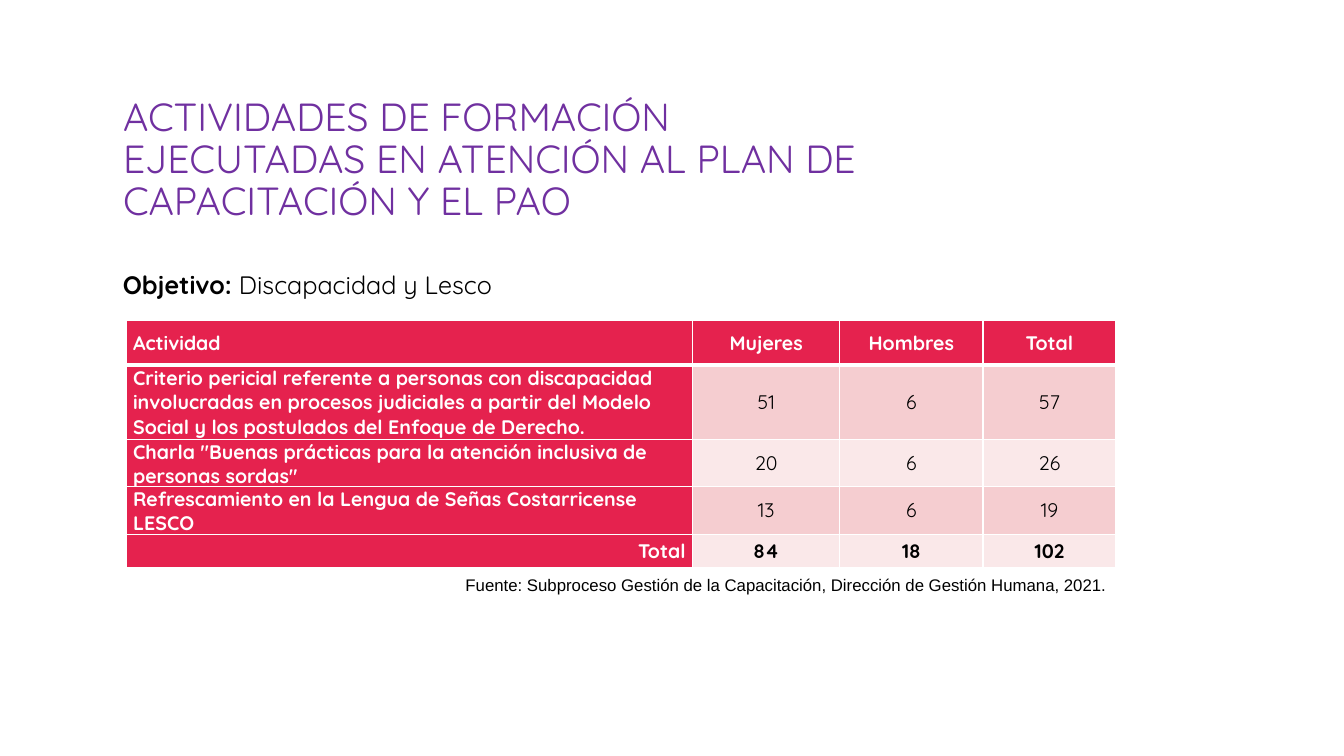
from dataclasses import dataclass

from lxml.etree import SubElement
from pptx import Presentation
from pptx.dml.color import RGBColor
from pptx.enum.text import MSO_ANCHOR, MSO_AUTO_SIZE, PP_ALIGN
from pptx.oxml.ns import qn
from pptx.util import Inches, Pt

TITLE = "ACTIVIDADES DE FORMACIÓN EJECUTADAS EN ATENCIÓN AL PLAN DE CAPACITACIÓN Y EL PAO"
OBJECTIVE = [("Objetivo: ", True), ("Discapacidad y Lesco", False)]
SOURCE = "Fuente: Subproceso Gestión de la Capacitación, Dirección de Gestión Humana, 2021."
ACTIVITIES = [
    ("Actividad", "Mujeres", "Hombres", "Total"),
    ("Criterio pericial referente a personas con discapacidad involucradas en procesos "
     "judiciales a partir del Modelo Social y los postulados del Enfoque de Derecho.",
     "51", "6", "57"),
    ('Charla "Buenas prácticas para la atención inclusiva de personas sordas"',
     "20", "6", "26"),
    ("Refrescamiento en la Lengua de Señas Costarricense LESCO", "13", "6", "19"),
    ("Total", "84", "18", "102"),
]
COLUMN_WIDTHS = [5.62, 1.46, 1.42, 1.32]
ROW_HEIGHTS = [0.44, 0.74, 0.47, 0.47, 0.33]


@dataclass(frozen=True)
class Theme:
    font: str = "Quicksand"
    source_font: str = "Arial"
    title: str = "7030A0"
    text: str = "000000"
    white: str = "FFFFFF"
    header: str = "E5224E"
    bands: tuple = ("FAE8E9", "F5CDD0")
    title_size: int = 28
    objective_size: int = 18
    table_size: int = 14
    source_size: int = 12


theme = Theme()


def add_span(para, text, size, color, bold=False, font=theme.font):
    span = para.add_run()
    span.text = text
    span.font.name = font
    span.font.size = Pt(size)
    span.font.bold = bold
    span.font.color.rgb = RGBColor.from_string(color)


def add_text_box(page, left, top, width, height):
    box = page.shapes.add_textbox(Inches(left), Inches(top), Inches(width), Inches(height))
    box.text_frame.word_wrap = True
    return box.text_frame.paragraphs[0]


def set_borders(cell, widths):
    properties = cell._tc.get_or_add_tcPr()
    for position, (side, width) in enumerate(widths.items()):
        line = SubElement(properties, qn(f"a:ln{side}"), w=str(Pt(width)))
        fill = SubElement(line, qn("a:solidFill"))
        SubElement(fill, qn("a:srgbClr"), val=theme.white)
        properties.insert(position, line)


def add_title(page):
    title = page.shapes.title
    title.left, title.top = Inches(1.12), Inches(0.89)
    title.width, title.height = Inches(7.48), Inches(1.41)
    frame = title.text_frame
    frame.word_wrap = True
    frame.auto_size = MSO_AUTO_SIZE.NONE
    frame.vertical_anchor = MSO_ANCHOR.MIDDLE
    para = frame.paragraphs[0]
    para.alignment = PP_ALIGN.LEFT
    para.line_spacing = 0.9
    add_span(para, TITLE, theme.title_size, theme.title)


def fill_cell(cell, text, row, column):
    last = len(ACTIVITIES) - 1
    is_label = row == 0 or column == 0
    cell.fill.solid()
    cell.fill.fore_color.rgb = RGBColor.from_string(
        theme.header if is_label else theme.bands[row % 2])
    cell.margin_left = cell.margin_right = Inches(0.07)
    cell.margin_top = cell.margin_bottom = 0
    cell.vertical_anchor = MSO_ANCHOR.MIDDLE
    para = cell.text_frame.paragraphs[0]
    if column:
        para.alignment = PP_ALIGN.CENTER
    else:
        para.alignment = PP_ALIGN.RIGHT if row == last else PP_ALIGN.LEFT
    add_span(para, text, theme.table_size, theme.white if is_label else theme.text,
             bold=is_label or row == last)
    set_borders(cell, {"L": 1, "R": 1, "T": 3 if row == 1 else 1, "B": 3 if row == 0 else 1})


def add_activities(page):
    table = page.shapes.add_table(
        len(ACTIVITIES), len(COLUMN_WIDTHS), Inches(1.25), Inches(3.18),
        Inches(sum(COLUMN_WIDTHS)), Inches(sum(ROW_HEIGHTS))).table
    for column, width in zip(table.columns, COLUMN_WIDTHS):
        column.width = Inches(width)
    for row, height in zip(table.rows, ROW_HEIGHTS):
        row.height = Inches(height)
    for row, values in enumerate(ACTIVITIES):
        for column, text in enumerate(values):
            fill_cell(table.cell(row, column), text, row, column)


def main():
    deck = Presentation()
    deck.slide_width, deck.slide_height = Inches(13.33), Inches(7.5)
    page = deck.slides.add_slide(deck.slide_layouts.get_by_name("Title Only"))
    add_title(page)
    objective = add_text_box(page, 1.12, 2.62, 10.08, 0.4)
    for text, bold in OBJECTIVE:
        add_span(objective, text, theme.objective_size, theme.text, bold)
    add_activities(page)
    source = add_text_box(page, 4.51, 5.65, 6.57, 0.3)
    source.alignment = PP_ALIGN.RIGHT
    add_span(source, SOURCE, theme.source_size, theme.text, font=theme.source_font)
    deck.save("out.pptx")


if __name__ == "__main__":
    main()
